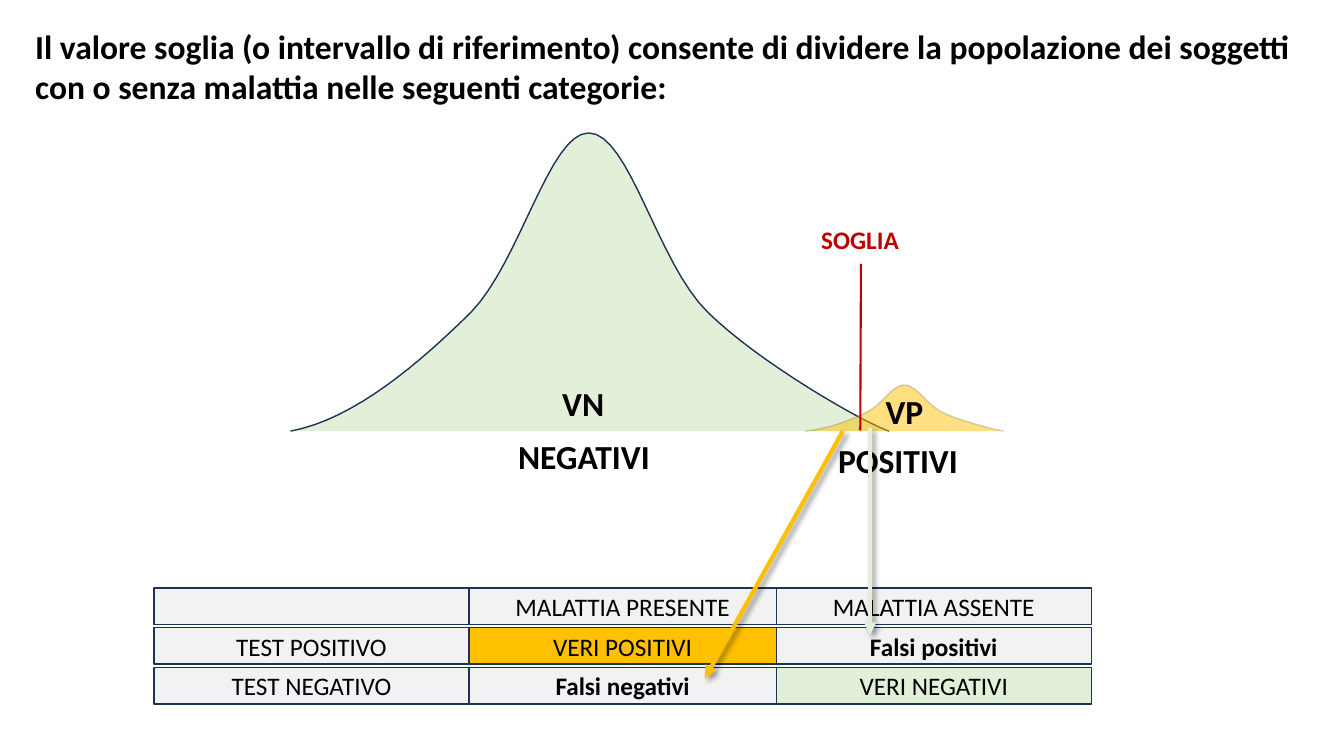
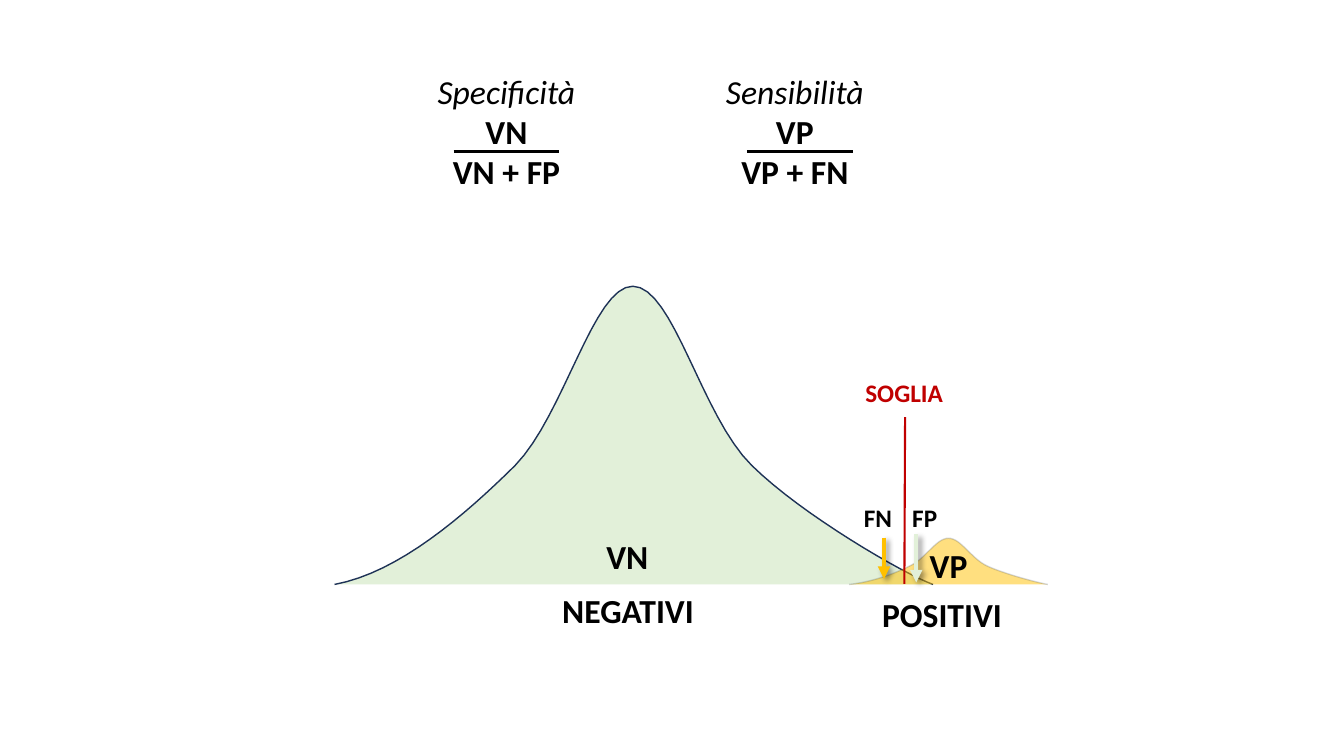
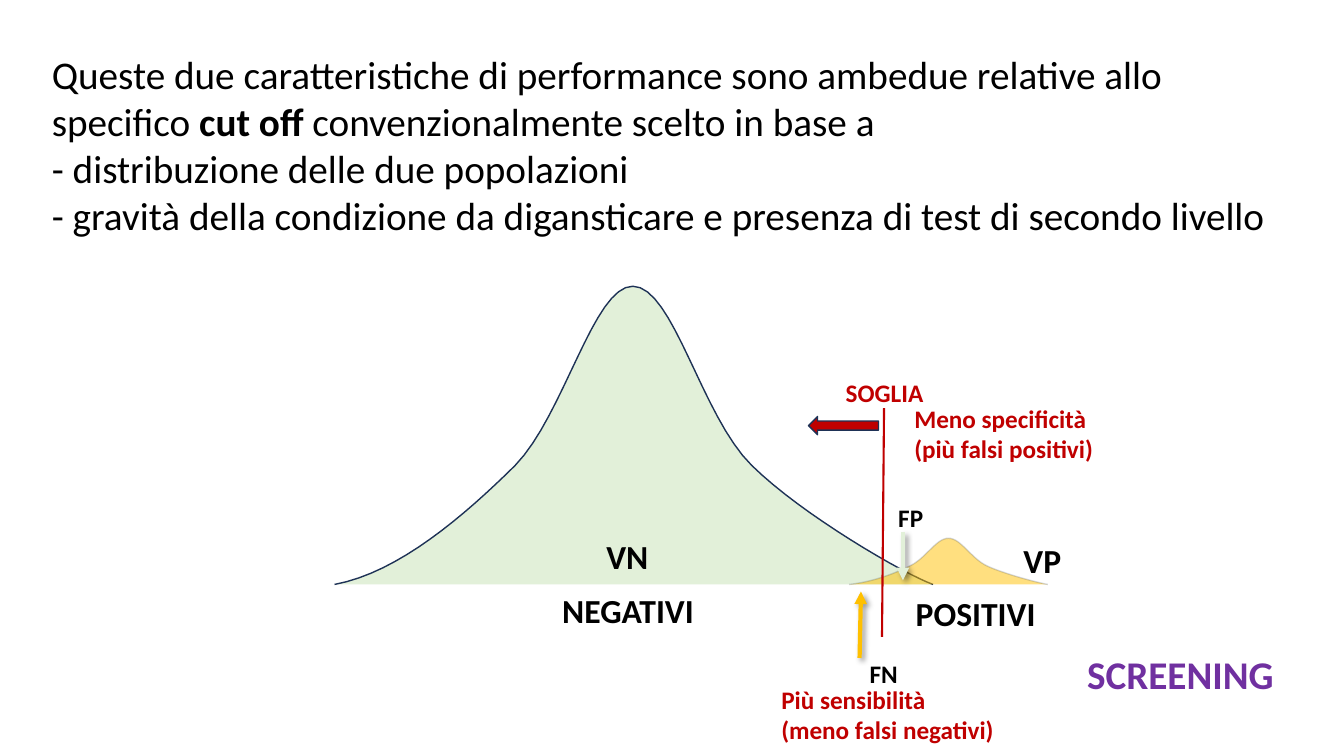
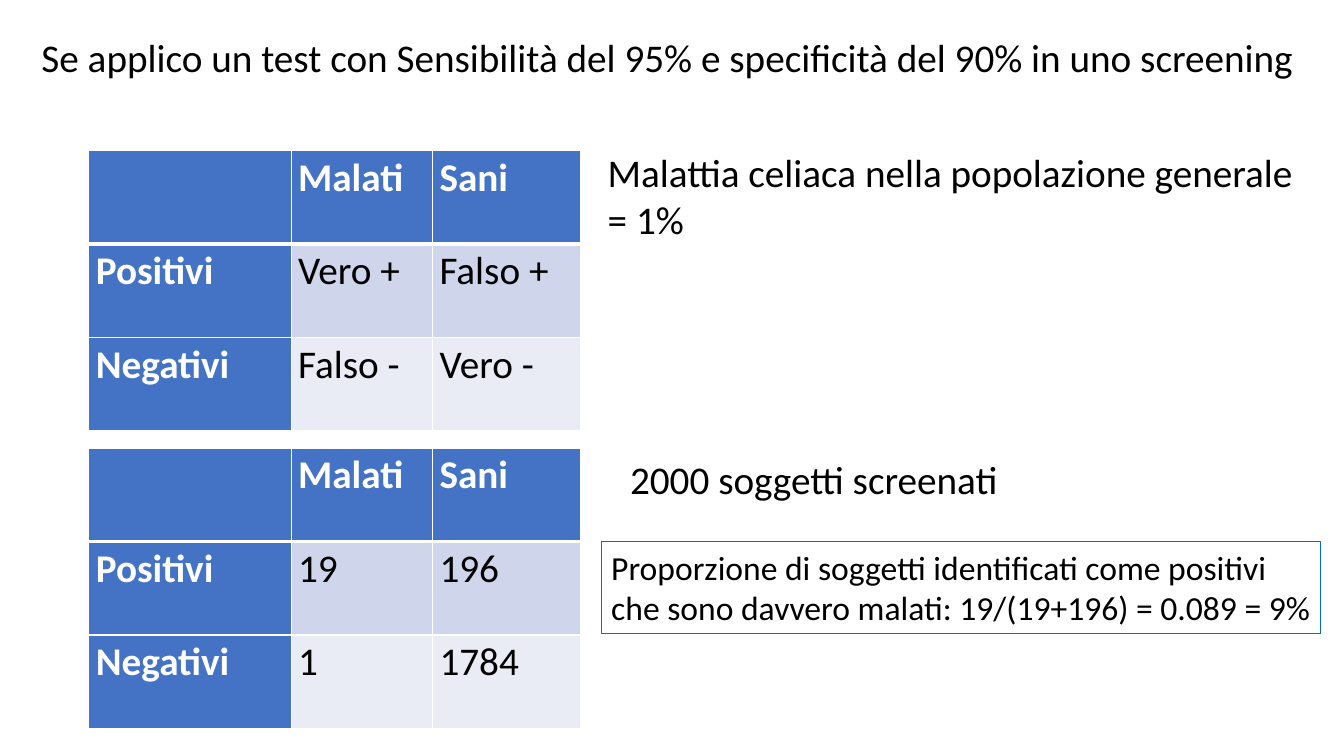
from lxml.etree import SubElement
from pptx import Presentation
from pptx.dml.color import RGBColor
from pptx.enum.shapes import MSO_CONNECTOR as Link, MSO_SHAPE as Kind
from pptx.enum.text import MSO_ANCHOR as Anchor, MSO_AUTO_SIZE as Fit, PP_ALIGN as Align
from pptx.oxml.ns import qn
from pptx.util import Pt

FONT = "Calibri"
BLACK = RGBColor(0, 0, 0)
WHITE = RGBColor(0xFF, 0xFF, 0xFF)
NAVY = RGBColor(0x1E, 0x32, 0x56)
GREEN = RGBColor(0xE2, 0xF0, 0xD9)
GOLD = RGBColor(0xFF, 0xC0, 0x00)
RED = RGBColor(0xC0, 0, 0)
PURPLE = RGBColor(0x70, 0x30, 0xA0)
GREY = RGBColor(0xF2, 0xF2, 0xF2)
BLUE = RGBColor(0x44, 0x72, 0xC4)
FRAME = RGBColor(0, 0x70, 0xC0)
BANDS = RGBColor(0xCF, 0xD5, 0xEA), RGBColor(0xE9, 0xEB, 0xF5)

# Start point, then cubic segments of two handles and an end, from the curve's top left
TALL = [(0, 213),
        (46, 204.5), (93, 163.5), (129, 128),
        (164, 92), (185, 0), (213, 0),
        (242, 0), (262, 93), (298, 128),
        (334, 163.5), (407.5, 206), (427.5, 213)]
SMALL = [(0, 33),
         (15, 31.5), (31, 26), (43, 20),
         (55, 14.5), (62, 0), (71, 0),
         (80, 0), (87, 14.5), (99, 20),
         (111, 25.5), (135.5, 32), (142, 33)]


def pts(*nums):
    return [Pt(n) for n in nums]


def write(frame, paras, size=24, color=BLACK, bold=False,
          align=None, leading=None, after=None):
    """Fill a frame; a paragraph is a string or a list of (text, bold) runs."""
    for i, para in enumerate([paras] if isinstance(paras, str) else paras):
        p = frame.add_paragraph() if i else frame.paragraphs[0]
        p.alignment, p.line_spacing = align, leading
        if after:
            p.space_after = Pt(after)
        for words, heavy in [(para, bold)] if isinstance(para, str) else para:
            run = p.add_run()
            run.text = words
            font = run.font
            font.name, font.size, font.bold = FONT, Pt(size), heavy
            font.color.rgb = color


def label(slide, box, paras, wrap=True, **fmt):
    item = slide.shapes.add_textbox(*pts(*box))
    item.text_frame.word_wrap = wrap
    item.text_frame.auto_size = Fit.SHAPE_TO_FIT_TEXT
    write(item.text_frame, paras, **fmt)
    return item


def tag(slide, box, words, **fmt):
    label(slide, box, words, wrap=False, bold=True, **fmt)


def paint(shape, fill, line=NAVY, width=1):
    shape.shadow.inherit = False
    shape.fill.solid()
    shape.fill.fore_color.rgb = fill
    shape.line.color.rgb = line
    shape.line.width = Pt(width)


def fade(shape, where, share):
    """Set the opacity, in percent, of the colour found at a place in spPr."""
    color = shape._element.spPr.find("/".join(qn(n) for n in where))
    SubElement(color, qn("a:alpha"), val=str(share * 1000))


def line(slide, start, end, color, width, arrow=False):
    item = slide.shapes.add_connector(Link.STRAIGHT, *pts(*start, *end))
    item.line.color.rgb = color
    item.line.width = Pt(width)
    props = item._element.spPr
    effects = SubElement(props, qn("a:effectLst"))
    if arrow:
        SubElement(props.find(qn("a:ln")), qn("a:tailEnd"), type="triangle")
        shade = SubElement(effects, qn("a:outerShdw"), blurRad=str(Pt(4)),
                           dist=str(Pt(3)), dir="2700000", algn="tl", rotWithShape="0")
        tone = SubElement(shade, qn("a:srgbClr"), val="000000")
        SubElement(tone, qn("a:alpha"), val="40000")


def arrow(slide, start, end, color):
    line(slide, start, end, color, 3, arrow=True)


def curve(slide, x, y, knots, fill, steps=16):
    """Draw an open outline through cubic segments, with (x, y) as its top left."""
    dots = []
    for i in range(0, len(knots) - 1, 3):
        for k in range(1, steps + 1):
            t = k / steps
            mix = (1 - t) ** 3, 3 * t * (1 - t) ** 2, 3 * t * t * (1 - t), t ** 3
            a, b = (sum(m * knot[axis] for m, knot in zip(mix, knots[i:i + 4]))
                    for axis in (0, 1))
            dots.append(pts(x + a, y + b))
    pen = slide.shapes.build_freeform(*pts(x + knots[0][0], y + knots[0][1]))
    pen.add_line_segments(dots, close=False)
    shape = pen.convert_to_shape()
    paint(shape, fill)
    return shape


def plot(slide, x, y, pos=(384, 216), true=(418, 181), name=(372, 61.5),
         foot=(407, 212.5), head=(407.5, 93.5)):
    """Draw both populations and the threshold, all relative to (x, y)."""
    curve(slide, x, y, TALL, GREEN)
    small = curve(slide, x + 367.5, y + 180, SMALL, GOLD)
    fade(small, ["a:solidFill", "a:srgbClr"], 50)
    fade(small, ["a:ln", "a:solidFill", "a:srgbClr"], 19)
    line(slide, (x + foot[0], y + foot[1]), (x + head[0], y + head[1]), RED, 1.5)
    for words, (dx, dy), wide in (("NEGATIVI", (155.5, 213), 109.5),
                                  ("POSITIVI", pos, 101),
                                  ("VN", (187, 175), 44.5),
                                  ("VP", true, 42)):
        tag(slide, (x + dx, y + dy, wide, 36), words)
    tag(slide, (x + name[0], y + name[1], 70.5, 29), "SOGLIA", size=18, color=RED)


def matrix(slide, x, y):
    """Lay out the test-by-disease grid of boxes."""
    rows = [("", "MALATTIA PRESENTE", "MALATTIA ASSENTE"),
            ("TEST POSITIVO", "VERI POSITIVI", "Falsi positivi"),
            ("TEST NEGATIVO", "Falsi negativi", "VERI NEGATIVI")]
    fills = {"VERI POSITIVI": GOLD, "VERI NEGATIVI": GREEN}
    cols = (0, 225), (225, 219.5), (444.5, 225)
    for i, row in enumerate(rows):
        for (dx, wide), words in zip(cols, row):
            cell = slide.shapes.add_shape(
                Kind.RECTANGLE, *pts(x + dx, y + 28.4 * i, wide, 26))
            paint(cell, fills.get(words, GREY))
            if words:
                cell.text_frame.vertical_anchor = Anchor.MIDDLE
                write(cell.text_frame, words, size=18, align=Align.CENTER,
                      bold=words.startswith("Falsi"))


def ratio(slide, x, y, inset, name, top, base):
    """Write a named fraction, its bar starting at the inset."""
    box = label(slide, (x, y, 137.5, 94), [name, [(top, True)], [(base, True)]],
                align=Align.CENTER)
    box.text_frame.paragraphs[0].runs[0].font.italic = True
    line(slide, (x + inset, y + 61), (x + inset + 75.5, y + 61), BLACK, 2.25)


def edge(cell, side, width):
    ln = SubElement(cell._tc.get_or_add_tcPr(), qn("a:ln" + side), w=str(Pt(width)))
    fill = SubElement(ln, qn("a:solidFill"))
    SubElement(fill, qn("a:srgbClr"), val=str(WHITE))


def table(slide, x, y, values):
    rows = [("", "Malati", "Sani"),
            ("Positivi", *values[0]),
            ("Negativi", *values[1])]
    grid = slide.shapes.add_table(3, 3, *pts(x, y, 351, 200.4)).table
    grid.horz_banding = False
    for col, wide in zip(grid.columns, (144.5, 101, 105.5)):
        col.width = Pt(wide)
    for i, row in enumerate(rows):
        grid.rows[i].height = Pt(66.8)
        for j, words in enumerate(row):
            cell = grid.cell(i, j)
            head = i == 0 or j == 0
            for side, width in (("L", 1), ("R", 1), ("T", 3 if i == 1 else 1),
                                ("B", 3 if i == 0 else 1)):
                edge(cell, side, width)
            cell.fill.solid()
            cell.fill.fore_color.rgb = BLUE if head else BANDS[i - 1]
            cell.margin_left = cell.margin_right = Pt(5)
            cell.margin_top = cell.margin_bottom = 0
            if words:
                write(cell.text_frame, words, size=28, bold=head, leading=1.07,
                      after=8, color=WHITE if head else BLACK)


def classes(slide):
    label(slide, (18, 15, 926, 65.5),
          "Il valore soglia (o intervallo di riferimento) consente di dividere la "
          "popolazione dei soggetti con o senza malattia nelle seguenti categorie:",
          bold=True)
    plot(slide, 207.5, 95)
    matrix(slide, 110, 420)
    arrow(slide, (621.5, 306), (621.5, 453.5), GREEN)
    arrow(slide, (602, 308), (503.5, 484.5), GOLD)


def measures(slide):
    plot(slide, 239, 204.5)
    ratio(slide, 293, 47, 31, "Specificità", "VN", "VN + FP")
    ratio(slide, 499, 47, 34.5, "Sensibilità", "VP", "VP + FN")
    tag(slide, (610, 355, 34.5, 29), "FN", size=18)
    tag(slide, (644.5, 355, 32.5, 29), "FP", size=18)
    arrow(slide, (654.5, 381.5), (654.5, 416), GREEN)
    arrow(slide, (631.5, 384), (631.5, 413.5), GOLD)


def cutoff(slide):
    label(slide, (30, 32.5, 900, 143),
          [[("Queste due caratteristiche di performance sono ambedue relative allo "
             "specifico ", False), ("cut off ", True),
            ("convenzionalmente scelto in base a", False)],
           "- distribuzione delle due popolazioni",
           "- gravità della condizione da digansticare e presenza di test di secondo livello"],
          size=28)
    plot(slide, 239, 204.5, pos=(408, 215.5), true=(485, 177.5), name=(358, 61.5),
         foot=(391, 250.5), head=(392.5, 87))
    tag(slide, (614, 466.5, 34.5, 29), "FN", size=18)
    tag(slide, (634.5, 355.5, 32.5, 29), "FP", size=18)
    arrow(slide, (645, 380), (645, 414.5), GREEN)
    arrow(slide, (614, 470), (615, 422.5), GOLD)
    shift = slide.shapes.add_shape(Kind.LEFT_ARROW, *pts(577.5, 297.5, 50, 13))
    paint(shift, RED)
    for x, y, words in ((646, 284.5, ["Meno specificità", "(più falsi positivi)"]),
                        (551, 485, ["Più sensibilità", "(meno falsi negativi)"])):
        label(slide, (x, y, 219, 51), words, size=18, color=RED, bold=True)
    tag(slide, (769.5, 461, 149, 41), "SCREENING", size=28, color=PURPLE)


def screening(slide):
    label(slide, (22.5, 20, 921, 41),
          "Se applico un test con Sensibilità del 95% e specificità del 90% in uno screening",
          size=28)
    table(slide, 63.5, 107.5, [("Vero +", "Falso +"), ("Falso -", "Vero -")])
    table(slide, 63.5, 320, [("19", "196"), ("1", "1784")])
    label(slide, (427, 102.5, 516, 75),
          "Malattia celiaca nella popolazione generale = 1%", size=28)
    label(slide, (443, 322, 504, 41), "2000 soggetti screenati", size=28)
    result = label(slide, (429.5, 387, 514, 65.5),
                   "Proporzione di soggetti identificati come positivi che sono davvero "
                   "malati: 19/(19+196) = 0.089 = 9%")
    result.text_frame.margin_right = Pt(4)
    result.line.color.rgb = FRAME
    result.line.width = Pt(0.75)


def main():
    deck = Presentation()
    deck.slide_width, deck.slide_height = pts(960, 540)
    for build in (classes, measures, cutoff, screening):
        build(deck.slides.add_slide(deck.slide_layouts[6]))
    deck.save("out.pptx")


if __name__ == "__main__":
    main()
